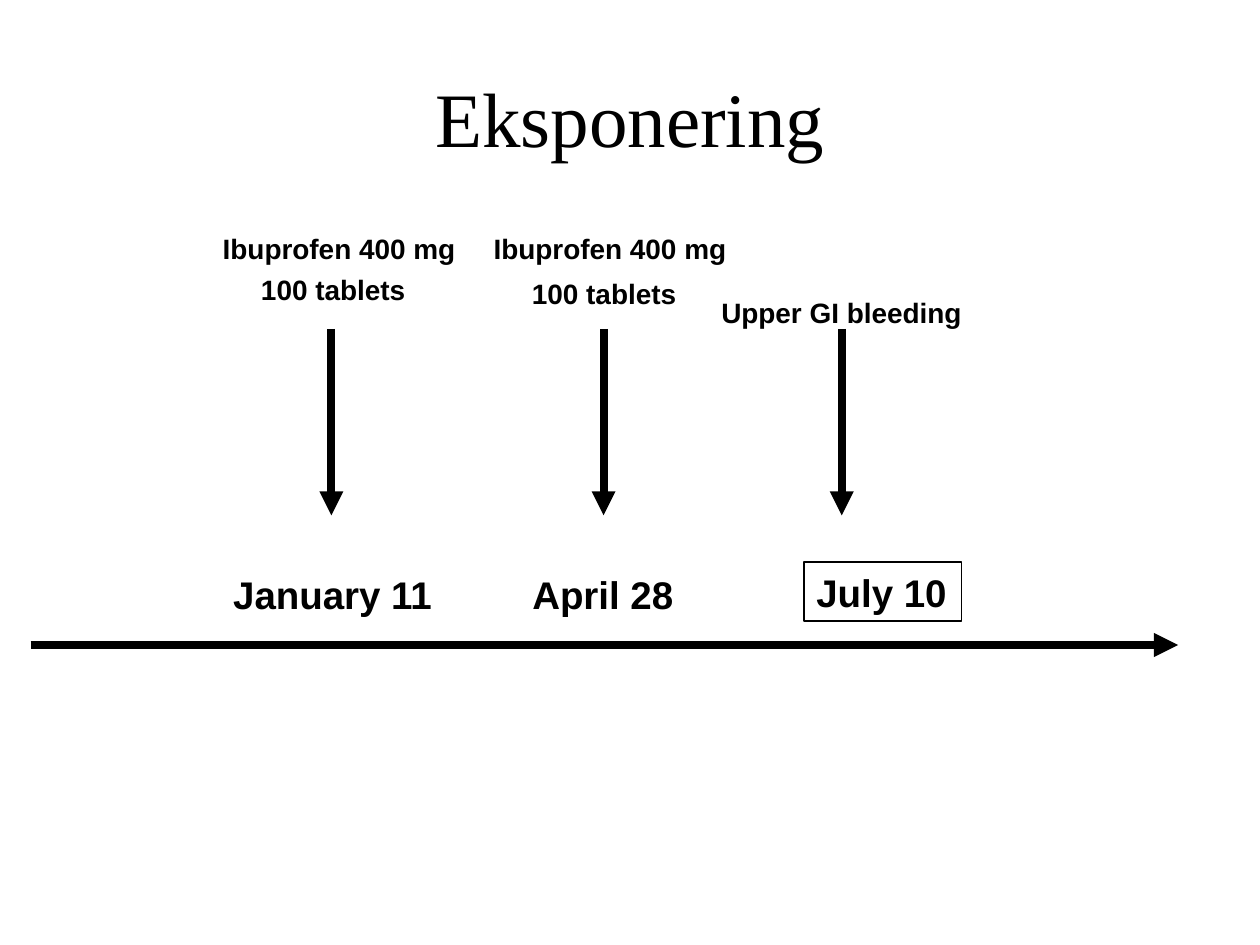
from pptx import Presentation
from pptx.dml.color import RGBColor
from pptx.enum.shapes import MSO_CONNECTOR, MSO_SHAPE
from pptx.enum.text import MSO_ANCHOR, PP_ALIGN
from pptx.oxml.ns import qn
from pptx.util import Pt
from lxml.etree import SubElement


def color(code):
    return RGBColor.from_string(code)


class Board:
    ink = "000000"
    sans = "Arial"
    serif = "Times New Roman"
    bold = 4.6
    thin = 0.75

    def __init__(self, slide):
        self.slide = slide

    def fill(self, shape, text, size, font, align, anchor):
        frame = shape.text_frame
        frame.text = text
        frame.word_wrap = False
        frame.vertical_anchor = anchor
        line = frame.paragraphs[0]
        line.alignment = align
        style = line.runs[0].font
        style.name = font
        style.size = Pt(size)
        style.bold = font == self.sans
        style.color.rgb = color(self.ink)

    def title(self, text, x, y, w, h):
        box = self.slide.shapes.add_textbox(Pt(x), Pt(y), Pt(w), Pt(h))
        self.fill(box, text, 44, self.serif, PP_ALIGN.CENTER, MSO_ANCHOR.MIDDLE)

    def label(self, text, x, y, w, h, size, align=PP_ALIGN.CENTER):
        box = self.slide.shapes.add_textbox(Pt(x), Pt(y), Pt(w), Pt(h))
        self.fill(box, text, size, self.sans, align, MSO_ANCHOR.BOTTOM)

    def frame(self, text, x, y, w, h, size):
        box = self.slide.shapes.add_shape(
            MSO_SHAPE.RECTANGLE, Pt(x), Pt(y), Pt(w), Pt(h))
        box.shadow.inherit = False
        box.fill.background()
        box.line.color.rgb = color(self.ink)
        box.line.width = Pt(self.thin)
        self.fill(box, text, size, self.sans, PP_ALIGN.LEFT, MSO_ANCHOR.BOTTOM)

    def arrow(self, x1, y1, x2, y2):
        line = self.slide.shapes.add_connector(
            MSO_CONNECTOR.STRAIGHT, Pt(x1), Pt(y1), Pt(x2), Pt(y2))
        line.line.color.rgb = color(self.ink)
        line.line.width = Pt(self.bold)
        SubElement(line.line._get_or_add_ln(), qn("a:tailEnd"), type="triangle")
        SubElement(line._element.spPr, qn("a:effectLst"))


def main():
    deck = Presentation()
    deck.slide_width, deck.slide_height = Pt(720), Pt(540)
    board = Board(deck.slides.add_slide(deck.slide_layouts[6]))

    # Time axis and event arrows
    board.arrow(17.5, 368.6, 673.2, 368.6)
    for x in (189.4, 344.9, 481):
        board.arrow(x, 188, x, 294.5)

    # Dates
    board.label("January 11", 125.3, 322.6, 129.6, 33.8, 22)
    board.label("April 28", 296.6, 322.6, 95.8, 33.8, 22)
    board.frame("July 10", 459.4, 321.1, 90, 33.8, 22)

    # Prescriptions
    for x, y in ((120.2, 151.9), (275, 154.1)):
        board.label("Ibuprofen 400 mg", x, 128.2, 147.6, 26.6, 16, PP_ALIGN.LEFT)
        board.label("100 tablets", x + 21.6, y, 97.2, 26.6, 16)

    # Outcome
    board.label("Upper GI bleeding", 404.6, 165.2, 152.6, 26.6, 16)

    # Title
    board.title("Eksponering", 36, 21.6, 648, 90)

    deck.save("out.pptx")


if __name__ == "__main__":
    main()
